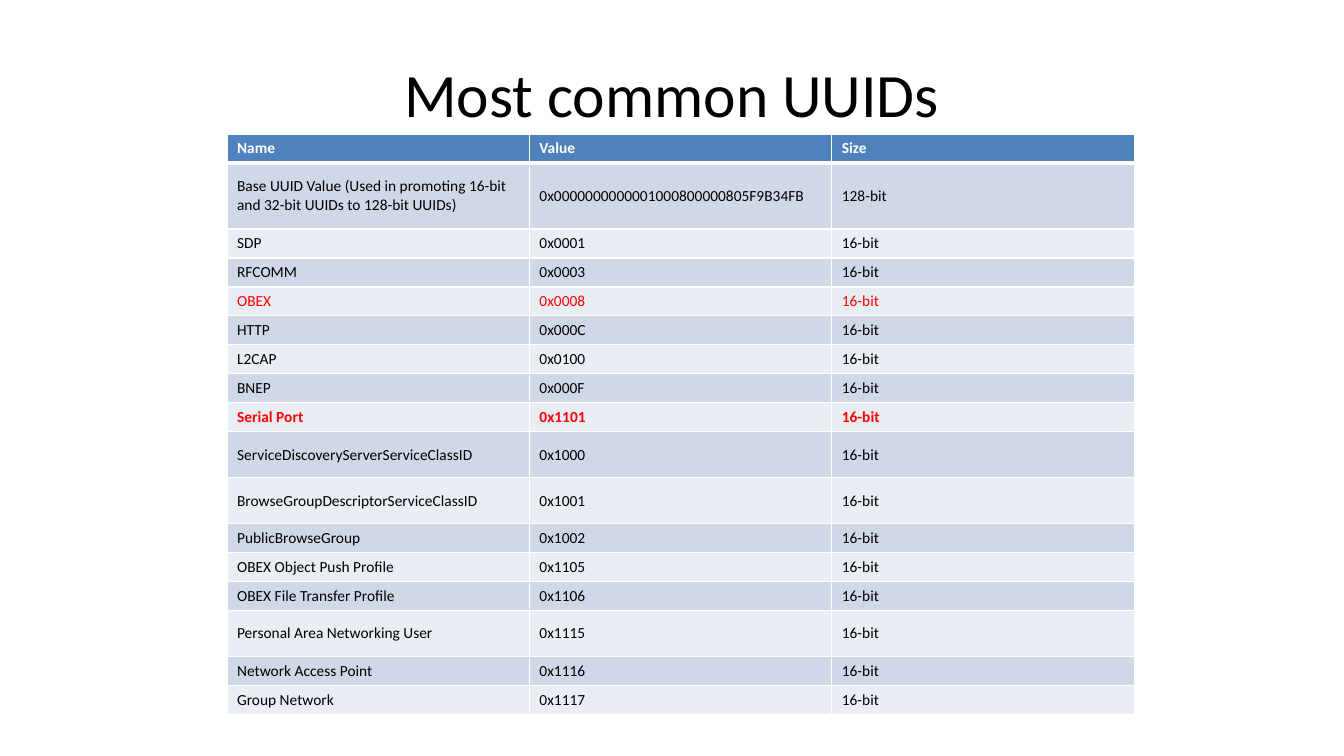
from lxml.etree import SubElement
from pptx import Presentation
from pptx.dml.color import RGBColor
from pptx.enum.text import MSO_ANCHOR, PP_ALIGN
from pptx.oxml.ns import qn
from pptx.util import Pt

EMU_PER_INCH = 914400
PX_PER_INCH = 100.8

BLACK, WHITE, RED = "000000", "FFFFFF", "FF0000"
HEADER_FILL = "4F81BD"
BAND_FILLS = ["D0D8E8", "E9EDF4"]

ROW_HEIGHT = 29
COLUMN_WIDTH = 302.4
TALL_ROWS = {1: 66, 9: 46, 10: 46, 14: 46}

HEADINGS = ("Name", "Value", "Size")
UUIDS = [
    ("Base UUID Value (Used in promoting 16-bit and 32-bit UUIDs to 128-bit UUIDs)",
     "0x0000000000001000800000805F9B34FB", "128-bit"),
    ("SDP", "0x0001", "16-bit"),
    ("RFCOMM", "0x0003", "16-bit"),
    ("OBEX", "0x0008", "16-bit"),
    ("HTTP", "0x000C", "16-bit"),
    ("L2CAP", "0x0100", "16-bit"),
    ("BNEP", "0x000F", "16-bit"),
    ("Serial Port", "0x1101", "16-bit"),
    ("ServiceDiscoveryServerServiceClassID", "0x1000", "16-bit"),
    ("BrowseGroupDescriptorServiceClassID", "0x1001", "16-bit"),
    ("PublicBrowseGroup", "0x1002", "16-bit"),
    ("OBEX Object Push Profile", "0x1105", "16-bit"),
    ("OBEX File Transfer Profile", "0x1106", "16-bit"),
    ("Personal Area Networking User", "0x1115", "16-bit"),
    ("Network Access Point", "0x1116", "16-bit"),
    ("Group Network", "0x1117", "16-bit"),
]
HIGHLIGHTS = {
    "OBEX": {"color": RED, "bold": False},
    "Serial Port": {"color": RED, "bold": True},
}


def px(length):
    return round(length * EMU_PER_INCH / PX_PER_INCH)


def rgb(hex_color):
    return RGBColor.from_string(hex_color)


def write(paragraph, text, color, **font_format):
    run = paragraph.add_run()
    run.text = text
    run.font.color.rgb = rgb(color)
    for attribute, value in {"name": "Calibri", **font_format}.items():
        setattr(run.font, attribute, value)


def add_title(slide, text):
    title = slide.shapes.add_textbox(px(67), px(30), px(1210), px(126))
    frame = title.text_frame
    frame.word_wrap = True
    frame.vertical_anchor = MSO_ANCHOR.MIDDLE
    heading = frame.paragraphs[0]
    heading.alignment = PP_ALIGN.CENTER
    write(heading, text, BLACK, size=Pt(44))


def add_borders(cell, top=1, bottom=1):
    properties = cell._tc.get_or_add_tcPr()
    for side, width in {"lnL": 1, "lnR": 1, "lnT": top, "lnB": bottom}.items():
        border = SubElement(properties, qn(f"a:{side}"), w=str(Pt(width)))
        border_fill = SubElement(border, qn("a:solidFill"))
        SubElement(border_fill, qn("a:srgbClr"), val=WHITE)


def fill_row(cells, texts, fill, font_format, **borders):
    for cell, text in zip(cells, texts):
        cell.vertical_anchor = MSO_ANCHOR.MIDDLE
        add_borders(cell, **borders)
        cell.fill.solid()
        cell.fill.fore_color.rgb = rgb(fill)
        write(cell.text_frame.paragraphs[0], text, size=Pt(11), **font_format)


def add_uuid_table(slide):
    heights = [TALL_ROWS.get(i, ROW_HEIGHT) for i in range(len(UUIDS) + 1)]
    table = slide.shapes.add_table(
        len(heights), len(HEADINGS), px(227), px(134),
        px(COLUMN_WIDTH * len(HEADINGS)), px(sum(heights))).table
    for column in table.columns:
        column.width = px(COLUMN_WIDTH)
    for row, height in zip(table.rows, heights):
        row.height = px(height)

    fill_row(table.rows[0].cells, HEADINGS, HEADER_FILL,
             {"color": WHITE, "bold": True}, bottom=3)
    for i, uuid in enumerate(UUIDS):
        font_format = HIGHLIGHTS.get(uuid[0], {"color": BLACK, "bold": False})
        fill_row(table.rows[i + 1].cells, uuid, BAND_FILLS[i % 2],
                 font_format, top=3 if i == 0 else 1)


def main():
    presentation = Presentation()
    presentation.slide_width = px(1344)
    presentation.slide_height = px(756)
    slide = presentation.slides.add_slide(presentation.slide_layouts[6])
    add_title(slide, "Most common UUIDs")
    add_uuid_table(slide)
    presentation.save("out.pptx")


if __name__ == "__main__":
    main()
